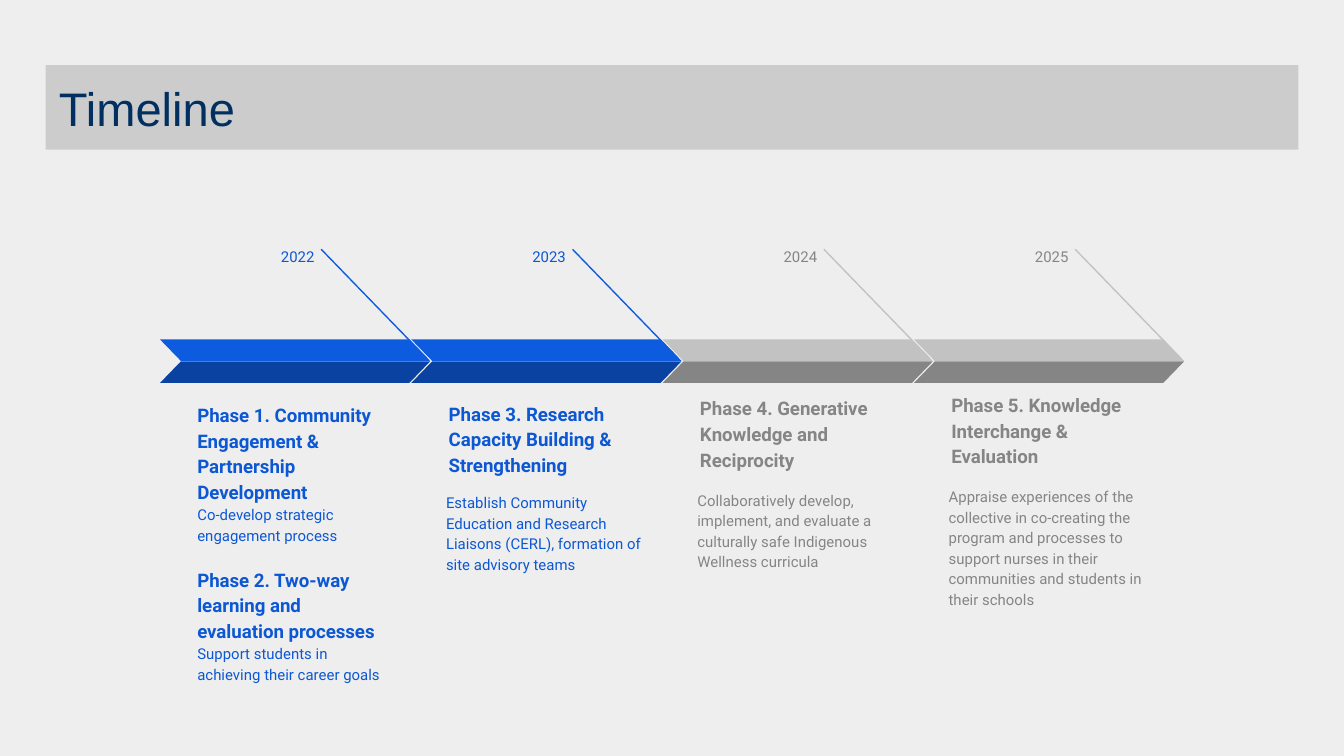
from collections import namedtuple

from lxml import etree
from pptx import Presentation
from pptx.dml.color import RGBColor
from pptx.enum.shapes import MSO_CONNECTOR, MSO_SHAPE
from pptx.enum.text import MSO_ANCHOR, MSO_AUTO_SIZE, PP_ALIGN
from pptx.oxml.ns import qn
from pptx.util import Emu, Pt

PX = 4572  # 200 px to the inch

Box = namedtuple("Box", "left top width height")
Theme = namedtuple("Theme", "text light dark")
Phase = namedtuple("Phase", "year theme texts")
Line = namedtuple("Line", "text size bold before", defaults=(0,))

ACTIVE = Theme("0C57D3", "0D5CDF", "0942A1")
FUTURE = Theme("858585", "C2C2C2", "858585")


def heading(text, before=0):
    return Line(text, 10, True, before)


def detail(text):
    return Line(text, 8, False)


# Each text entry: box relative to its column, anchor, space after, lines.
PHASES = [
    Phase("2022", ACTIVE, [
        (Box(36, 301, 328, 392), MSO_ANCHOR.BOTTOM, 0, [
            heading("Phase 1. Community Engagement & Partnership Development"),
            detail("Co-develop strategic engagement process"),
            heading("Phase 2. Two-way learning and evaluation processes", 11),
            detail("Support students in achieving their career goals")])]),
    Phase("2023", ACTIVE, [
        (Box(36, 287, 330, 98), MSO_ANCHOR.BOTTOM, 0, [
            heading("Phase 3. Research Capacity Building & Strengthening")]),
        (Box(32, 367, 338, 162), MSO_ANCHOR.TOP, 16, [
            detail("Establish Community Education and Research Liaisons (CERL), "
                   "formation of site advisory teams")])]),
    Phase("2024", FUTURE, [
        (Box(36, 279, 330, 98), MSO_ANCHOR.BOTTOM, 0, [
            heading("Phase 4. Generative Knowledge and Reciprocity")]),
        (Box(32, 363, 338, 162), MSO_ANCHOR.TOP, 16, [
            detail("Collaboratively develop, implement, and evaluate a culturally "
                   "safe Indigenous Wellness curricula")])]),
    Phase("2025", FUTURE, [
        (Box(36, 274, 330, 98), MSO_ANCHOR.BOTTOM, 0, [
            heading("Phase 5. Knowledge Interchange & Evaluation")]),
        (Box(32, 358, 338, 218), MSO_ANCHOR.TOP, 16, [
            detail("Appraise experiences of the collective in co-creating the "
                   "program and processes to support nurses in their communities "
                   "and students in their schools")])]),
]


def px(length):
    return Emu(length * PX)


def color(value):
    return RGBColor.from_string(value)


def emu(box):
    return [px(length) for length in box]


def inside(outer, box):
    """Move a box given relative to the outer box onto the page."""
    return box._replace(left=outer.left + box.left, top=outer.top + box.top)


def write(shape, lines, *, ink, font="Roboto", align=PP_ALIGN.LEFT,
          anchor=MSO_ANCHOR.TOP, spacing=1.15, after=0):
    frame = shape.text_frame
    frame.word_wrap = True
    frame.auto_size = MSO_AUTO_SIZE.NONE
    frame.vertical_anchor = anchor
    frame.margin_left = frame.margin_right = px(20)
    frame.margin_top = frame.margin_bottom = px(20)
    for index, line in enumerate(lines):
        para = frame.add_paragraph() if index else frame.paragraphs[0]
        para.alignment = align
        para.line_spacing = spacing
        para.space_before = Pt(line.before)
        para.space_after = Pt(after)
        span = para.add_run()
        span.text = line.text
        span.font.name = font
        span.font.size = Pt(line.size)
        span.font.bold = line.bold
        span.font.color.rgb = color(ink)


def add_filled(shapes, kind, box, fill):
    shape = shapes.add_shape(kind, *emu(box))
    shape.shadow.inherit = False
    shape.fill.solid()
    shape.fill.fore_color.rgb = color(fill)
    shape.line.fill.background()
    return shape


def add_leader(shapes, start, end, ink):
    leader = shapes.add_connector(MSO_CONNECTOR.STRAIGHT, *emu(start + end))
    leader.line.color.rgb = color(ink)
    leader.line.width = Pt(0.75)
    etree.SubElement(leader._element.spPr, qn("a:effectLst"))


def add_chevron(shapes, box, theme):
    """Two mirrored slanted bars, one above the other, forming an arrow."""
    for top, fill, flipped in ((0, theme.light, True), (33, theme.dark, False)):
        bar = add_filled(shapes, MSO_SHAPE.PARALLELOGRAM,
                         inside(box, Box(0, top, box.width, 32)), fill)
        bar.adjustments[0] = 0.97
        if flipped:
            bar._element.spPr.xfrm.set("flipH", "1")


def add_phase(page, box, phase):
    shapes = page.shapes.add_group_shape().shapes
    theme = phase.theme
    year = shapes.add_textbox(*emu(inside(box, Box(114, 0, 136, 52))))
    write(year, [detail(phase.year)], ink=theme.text, align=PP_ALIGN.RIGHT, after=16)
    for place, anchor, after, lines in phase.texts:
        text = shapes.add_textbox(*emu(inside(box, place)))
        write(text, lines, ink=theme.text, anchor=anchor, after=after)
    add_leader(shapes, (box.left + 240, box.top + 27),
               (box.left + 397, box.top + 189), theme.light)
    add_chevron(shapes, inside(box, Box(0, 161, box.width, 65)), theme)


def add_timeline(page, box, pitch):
    for index, phase in enumerate(PHASES):
        add_phase(page, box._replace(left=box.left + index * pitch), phase)


def add_title(page, box):
    banner = add_filled(page.shapes, MSO_SHAPE.RECTANGLE, box, "CCCCCC")
    write(banner, [Line("Timeline", 25.2, False)], ink="002F60", font="Arial",
          anchor=MSO_ANCHOR.MIDDLE, spacing=1.0)


def main():
    deck = Presentation()
    deck.slide_width, deck.slide_height = px(2000), px(1125)
    page = deck.slides.add_slide(deck.slide_layouts[6])
    page.background.fill.solid()
    page.background.fill.fore_color.rgb = color("EEEEEE")
    add_title(page, Box(68, 97, 1864, 126))
    add_timeline(page, Box(238, 344, 402, 693), pitch=374)
    deck.save("out.pptx")


if __name__ == "__main__":
    main()
